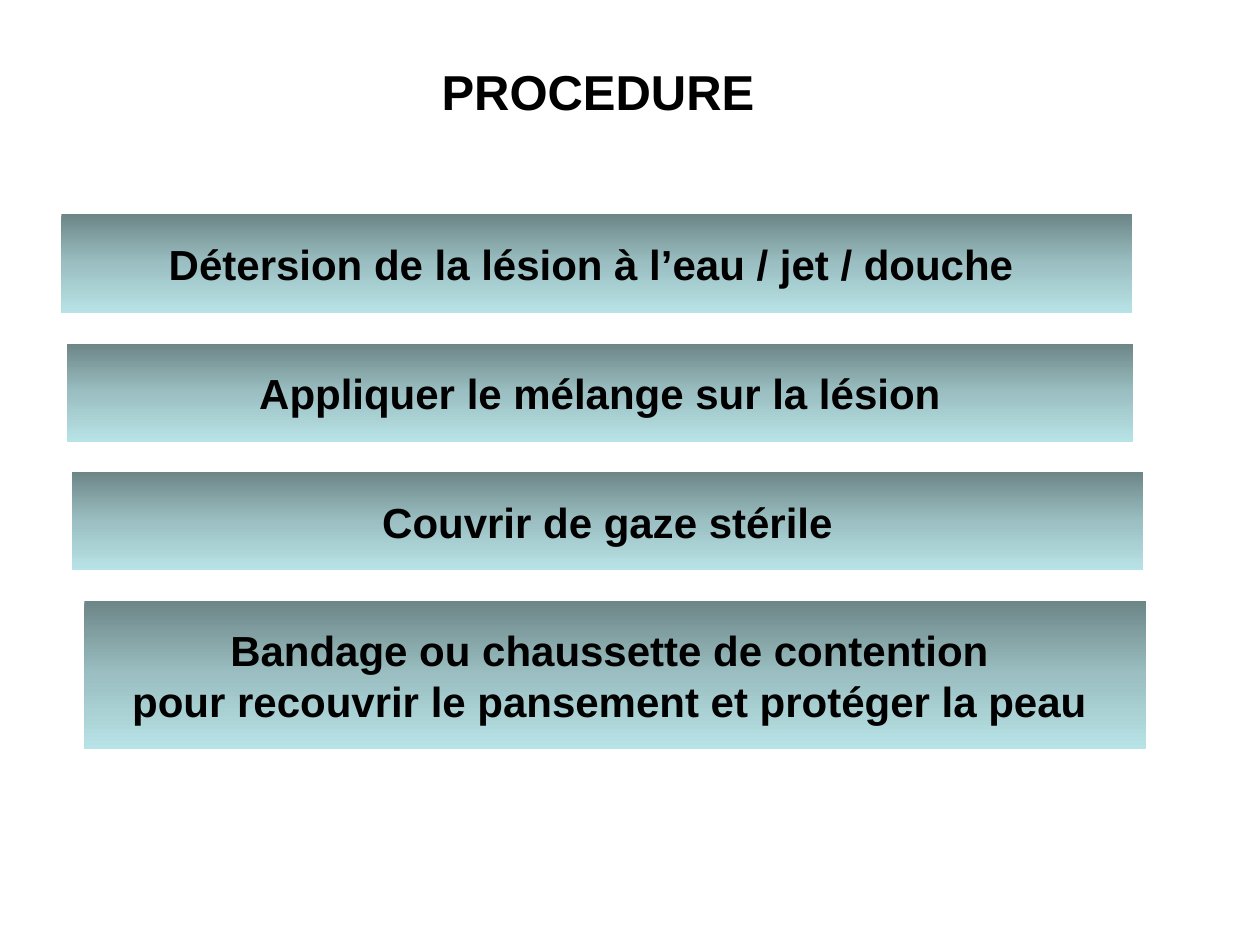
import copy

import pptx
import pptx.dml.color
import pptx.enum.shapes
import pptx.enum.text
import pptx.oxml.ns
import pptx.util

Cm = pptx.util.Cm
GRADIENT = [(0, "6D8688"), (0.5, "9BBFC2"), (1, "B8E3E6")]
STEP_GAP = 0.61
STEPS = [
    (1.24, 21.59, 2, "Détersion de la lésion à l’eau / jet / douche "),
    (1.35, 21.49, 1.98, "Appliquer le mélange sur la lésion"),
    (1.45, 21.59, 1.98, "Couvrir de gaze stérile"),
    (1.7, 21.41, 3,
     "Bandage ou chaussette de contention \vpour recouvrir le pansement et protéger la peau "),
]


def color(value):
    """Return the colour for a hex string."""
    return pptx.dml.color.RGBColor.from_string(value)


def write_text(shape, text, size, anchor):
    """Put centred bold black text into a shape."""
    text_frame = shape.text_frame
    text_frame.text = text
    text_frame.word_wrap = True
    text_frame.auto_size = pptx.enum.text.MSO_AUTO_SIZE.NONE
    text_frame.vertical_anchor = anchor
    for paragraph in text_frame.paragraphs:
        paragraph.alignment = pptx.enum.text.PP_ALIGN.CENTER
        for run in paragraph.runs:
            run.font.name = "Arial"
            run.font.size = pptx.util.Pt(size)
            run.font.bold = True
            run.font.color.rgb = color("000000")


def fill_gradient(shape):
    """Fill a shape with the three-stop gradient, dark at the top."""
    shape.fill.gradient()
    shape.fill.gradient_angle = 270
    stop_list = shape._element.spPr.find(".//" + pptx.oxml.ns.qn("a:gsLst"))
    stop_list.insert(1, copy.deepcopy(stop_list[0]))
    for stop, (position, value) in zip(shape.fill.gradient_stops, GRADIENT):
        stop.position = position
        stop.color.rgb = color(value)


def add_title(slide, left, top, width, height):
    """Place the slide title in the given box."""
    title = slide.shapes.title
    title.left, title.top = Cm(left), Cm(top)
    title.width, title.height = Cm(width), Cm(height)
    write_text(title, "PROCEDURE", 28, pptx.enum.text.MSO_ANCHOR.TOP)


def add_step(slide, left, top, width, height, text):
    """Draw one procedure step as a gradient bar in the given box."""
    step = slide.shapes.add_shape(
        pptx.enum.shapes.MSO_SHAPE.RECTANGLE, Cm(left), Cm(top), Cm(width), Cm(height))
    step.shadow.inherit = False
    step.line.fill.background()
    fill_gradient(step)
    write_text(step, text, 24, pptx.enum.text.MSO_ANCHOR.MIDDLE)


def add_steps(slide, top):
    """Stack the procedure steps downwards with equal gaps."""
    for left, width, height, text in STEPS:
        add_step(slide, left, top, width, height, text)
        top += height + STEP_GAP


def main():
    """Build and save the presentation."""
    presentation = pptx.Presentation()
    presentation.slide_width, presentation.slide_height = Cm(25.4), Cm(19.05)
    slide = presentation.slides.add_slide(presentation.slide_layouts[5])
    add_title(slide, 8.51, 1.12, 7.09, 1.45)
    add_steps(slide, 4.32)
    presentation.save("out.pptx")


if __name__ == "__main__":
    main()
